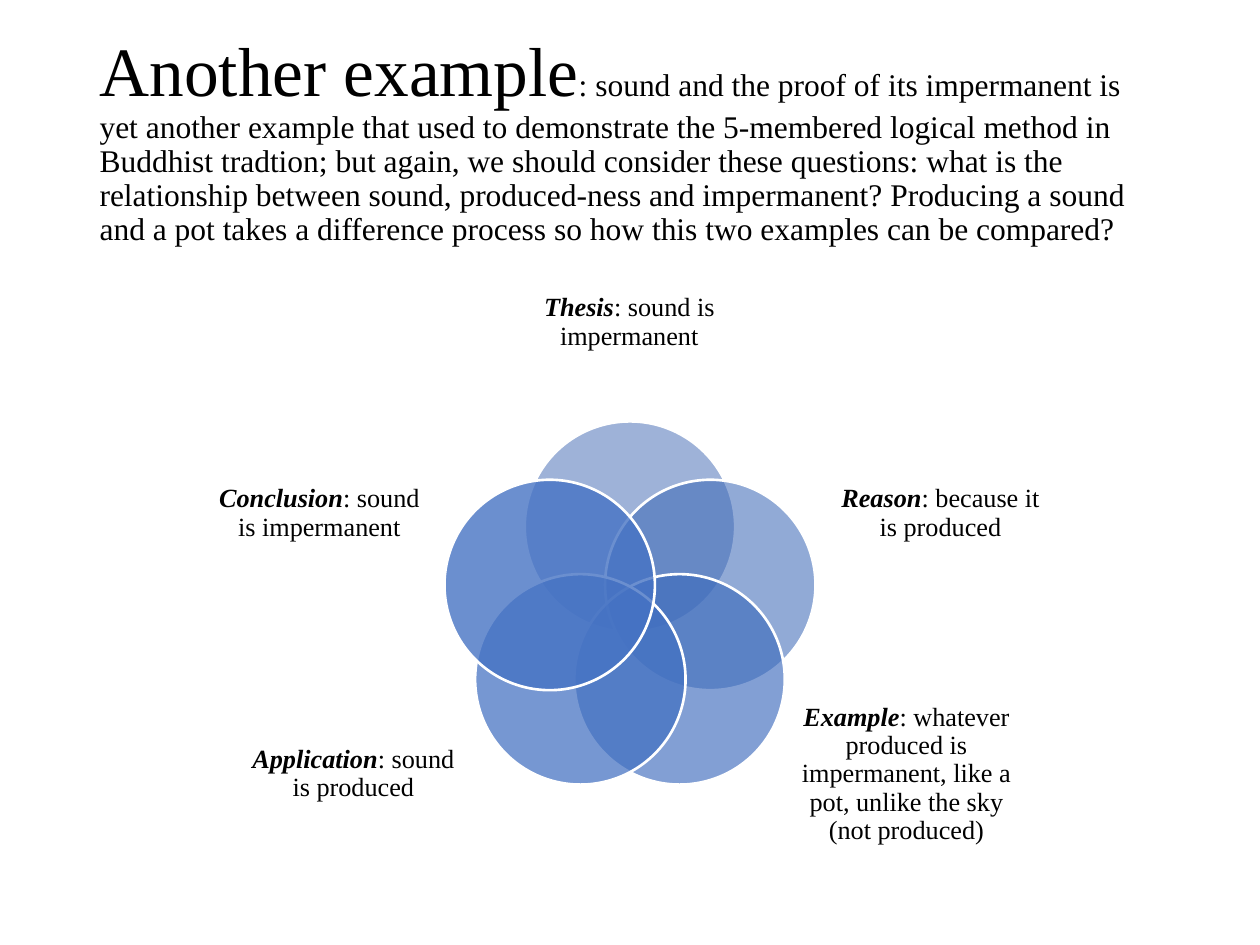
import math

from lxml import etree
from pptx import Presentation
from pptx.dml.color import RGBColor
from pptx.enum import shapes, text
from pptx.oxml import ns
from pptx.util import Inches, Pt

FONT = "Times New Roman"
COLORS = {
    "text": "000000", "edge": "FFFFFF",
    "Thesis": "3E67B2", "Reason": "3E6AB8", "Example": "3F6DBD",
    "Application": "4270C1", "Conclusion": "4673C4",
}
HUB = (5, 4.85)
RING = 0.67
SIZE = 1.67
SIDE = (1.73, 1.21)

# Term, statement, label position, label size, circle opacity in percent
STEPS = [
    ("Thesis", ": sound is impermanent", (4.03, 2), (1.93, 1.12), 50),
    ("Reason", ": because it is produced", (6.6, 3.47), SIDE, 57),
    ("Example", ": whatever produced is impermanent, like a pot, "
     "unlike the sky (not produced)", (6.33, 5.54), SIDE, 65),
    ("Application", ": sound is produced", (1.94, 5.54), SIDE, 72),
    ("Conclusion", ": sound is impermanent", (1.67, 3.47), SIDE, 80),
]


def color(name):
    return RGBColor.from_string(COLORS[name])


def add_run(para, words, size, strong=False):
    run = para.add_run()
    run.text = words
    font = run.font
    font.name, font.size = FONT, Pt(size)
    font.bold = font.italic = strong
    font.color.rgb = color("text")


def set_para(frame, align):
    """Centre the frame's text vertically and return its first paragraph."""
    frame.word_wrap = True
    frame.auto_size = text.MSO_AUTO_SIZE.NONE
    frame.vertical_anchor = text.MSO_ANCHOR.MIDDLE
    para = frame.paragraphs[0]
    para.alignment, para.line_spacing = align, 0.9
    return para


def add_title(slide):
    title = slide.shapes.title
    title.left, title.top = Inches(0.69), Inches(0.4)
    title.width, title.height = Inches(8.62), Inches(1.45)
    para = set_para(title.text_frame, text.PP_ALIGN.LEFT)
    add_run(para, "Another example", 39.6)
    add_run(para, ": sound and the proof of its impermanent is yet another "
            "example that used to demonstrate the 5-membered logical method "
            "in Buddhist tradtion; but again, we should consider these "
            "questions: what is the relationship between sound, "
            "produced-ness and impermanent? Producing a sound and a pot "
            "takes a difference process so how this two examples can be "
            "compared?", 18)


def add_circle(group, name, angle, opacity):
    left = HUB[0] + RING * math.sin(angle) - SIZE / 2
    top = HUB[1] - RING * math.cos(angle) - SIZE / 2
    circle = group.shapes.add_shape(
        shapes.MSO_SHAPE.OVAL, Inches(left), Inches(top),
        Inches(SIZE), Inches(SIZE))
    circle.shadow.inherit = False
    circle.fill.solid()
    circle.fill.fore_color.rgb = color(name)
    tint = circle.fill._xPr.find(".//" + ns.qn("a:srgbClr"))
    etree.SubElement(tint, ns.qn("a:alpha"), val=str(opacity * 1000))
    circle.line.color.rgb = color("edge")
    circle.line.width = Pt(1.5)


def add_label(group, term, words, spot, size):
    box = group.shapes.add_textbox(*map(Inches, spot + size))
    frame = box.text_frame
    frame.margin_left = frame.margin_right = 0
    frame.margin_top = frame.margin_bottom = 0
    para = set_para(frame, text.PP_ALIGN.CENTER)
    add_run(para, term, 15, strong=True)
    add_run(para, words, 15)


def main():
    deck = Presentation()
    deck.slide_width, deck.slide_height = Inches(10), Inches(7.5)
    slide = deck.slides.add_slide(deck.slide_layouts[5])
    add_title(slide)
    venn = slide.shapes.add_group_shape()
    for i, (term, words, spot, size, opacity) in enumerate(STEPS):
        add_circle(venn, term, math.tau * i / len(STEPS), opacity)
        add_label(venn, term, words, spot, size)
    deck.save("out.pptx")


if __name__ == "__main__":
    main()
